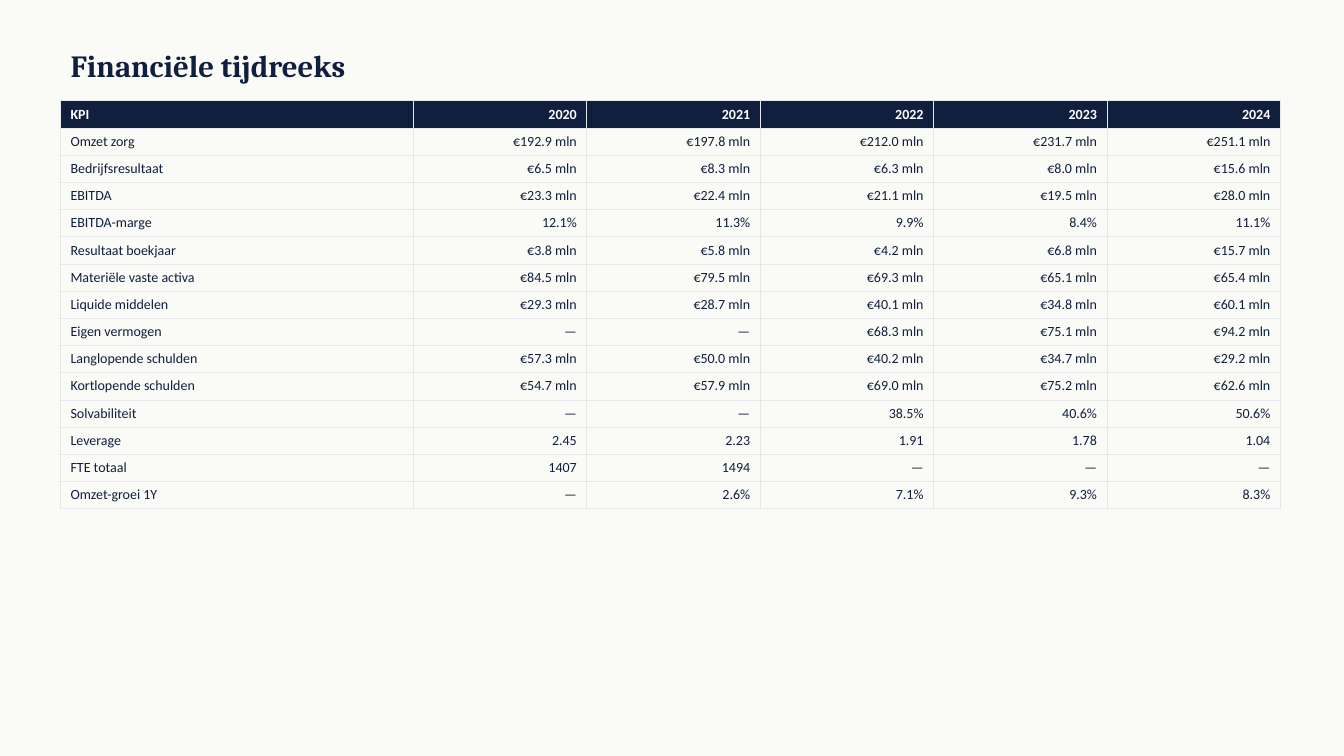
from lxml.etree import SubElement
from pptx import Presentation
from pptx.dml.color import RGBColor
from pptx.enum.text import MSO_ANCHOR, MSO_AUTO_SIZE, PP_ALIGN
from pptx.oxml.ns import qn
from pptx.util import Inches, Pt

COLORS = {"paper": "FAFAF7", "navy": "0F1F3D", "white": "FFFFFF", "rule": "E5E7EB"}
HEADER = ["KPI", "2020", "2021", "2022", "2023", "2024"]
KPIS = [
    ["Omzet zorg", "€192.9 mln", "€197.8 mln", "€212.0 mln", "€231.7 mln", "€251.1 mln"],
    ["Bedrijfsresultaat", "€6.5 mln", "€8.3 mln", "€6.3 mln", "€8.0 mln", "€15.6 mln"],
    ["EBITDA", "€23.3 mln", "€22.4 mln", "€21.1 mln", "€19.5 mln", "€28.0 mln"],
    ["EBITDA-marge", "12.1%", "11.3%", "9.9%", "8.4%", "11.1%"],
    ["Resultaat boekjaar", "€3.8 mln", "€5.8 mln", "€4.2 mln", "€6.8 mln", "€15.7 mln"],
    ["Materiële vaste activa", "€84.5 mln", "€79.5 mln", "€69.3 mln", "€65.1 mln", "€65.4 mln"],
    ["Liquide middelen", "€29.3 mln", "€28.7 mln", "€40.1 mln", "€34.8 mln", "€60.1 mln"],
    ["Eigen vermogen", "—", "—", "€68.3 mln", "€75.1 mln", "€94.2 mln"],
    ["Langlopende schulden", "€57.3 mln", "€50.0 mln", "€40.2 mln", "€34.7 mln", "€29.2 mln"],
    ["Kortlopende schulden", "€54.7 mln", "€57.9 mln", "€69.0 mln", "€75.2 mln", "€62.6 mln"],
    ["Solvabiliteit", "—", "—", "38.5%", "40.6%", "50.6%"],
    ["Leverage", "2.45", "2.23", "1.91", "1.78", "1.04"],
    ["FTE totaal", "1407", "1494", "—", "—", "—"],
    ["Omzet-groei 1Y", "—", "2.6%", "7.1%", "9.3%", "8.3%"],
]
KPI_WIDTH = 3.5
ROW_HEIGHT = 0.27


def rgb(name):
    """Return the named palette colour."""
    return RGBColor.from_string(COLORS[name])


def write_text(frame, text, size=10, font="Calibri", color="navy", bold=False, align=PP_ALIGN.LEFT):
    """Write one formatted paragraph into a text frame."""
    paragraph = frame.paragraphs[0]
    paragraph.alignment = align
    run = paragraph.add_run()
    run.text = text
    run.font.size = Pt(size)
    run.font.name = font
    run.font.bold = bold
    run.font.color.rgb = rgb(color)


def add_borders(cell, color="rule", width=0.5):
    """Draw a thin line on all four sides of a cell."""
    properties = cell._tc.get_or_add_tcPr()
    for side in ("a:lnL", "a:lnR", "a:lnT", "a:lnB"):
        border = SubElement(properties, qn(side), w=str(Pt(width)))
        fill = SubElement(border, qn("a:solidFill"))
        SubElement(fill, qn("a:srgbClr"), val=COLORS[color])


def add_heading(slide, text, left, top, width, height):
    """Place the slide title in the given box."""
    title = slide.shapes.title
    title.left, title.top = Inches(left), Inches(top)
    title.width, title.height = Inches(width), Inches(height)
    frame = title.text_frame
    frame.auto_size = MSO_AUTO_SIZE.NONE
    frame.vertical_anchor = MSO_ANCHOR.MIDDLE
    write_text(frame, text, size=22, font="Cambria", bold=True)


def add_kpi_table(slide, left, top, width):
    """Place the KPI table with equal year columns in the given width."""
    rows = [HEADER] + KPIS
    frame = slide.shapes.add_table(
        len(rows), len(HEADER), Inches(left), Inches(top),
        Inches(width), Inches(ROW_HEIGHT * len(rows)))
    table = frame.table
    table.horz_banding = False
    year_width = (width - KPI_WIDTH) / (len(HEADER) - 1)
    for index, column in enumerate(table.columns):
        column.width = Inches(year_width if index else KPI_WIDTH)
    for row_index, row in enumerate(rows):
        is_header = row_index == 0
        table.rows[row_index].height = Inches(ROW_HEIGHT)
        for column_index, value in enumerate(row):
            cell = table.cell(row_index, column_index)
            add_borders(cell)
            if is_header:
                cell.fill.solid()
                cell.fill.fore_color.rgb = rgb("navy")
            else:
                cell.fill.background()
            write_text(cell.text_frame, value, bold=is_header,
                       color="white" if is_header else "navy",
                       align=PP_ALIGN.RIGHT if column_index else PP_ALIGN.LEFT)


def main():
    """Build and save the financial time series slide."""
    deck = Presentation()
    deck.slide_width, deck.slide_height = Inches(13.33), Inches(7.5)
    slide = deck.slides.add_slide(deck.slide_layouts.get_by_name("Title Only"))
    slide.background.fill.solid()
    slide.background.fill.fore_color.rgb = rgb("paper")
    add_heading(slide, "Financiële tijdreeks", left=0.6, top=0.4, width=12, height=0.5)
    add_kpi_table(slide, left=0.6, top=1, width=12.1)
    deck.save("out.pptx")


if __name__ == "__main__":
    main()
